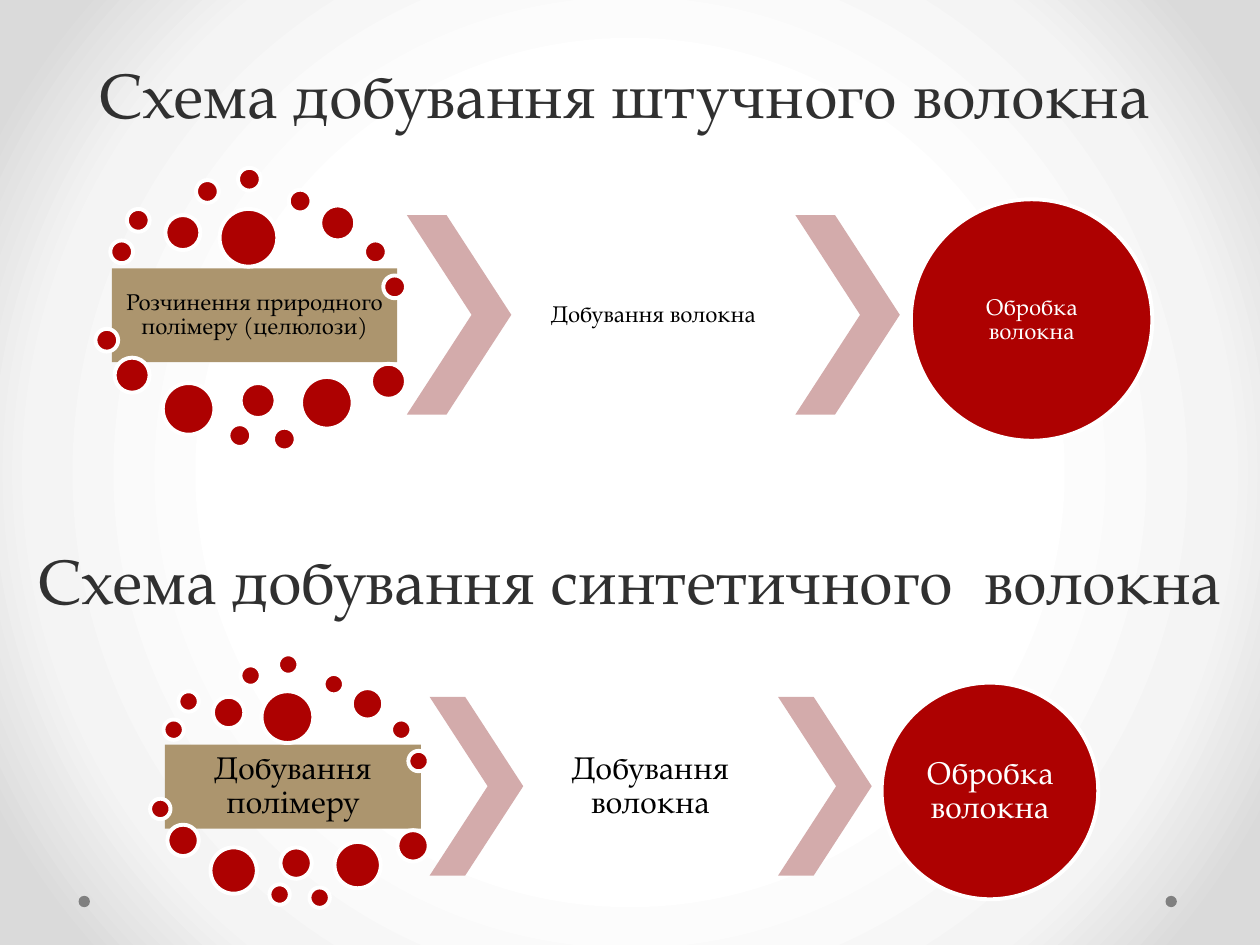
from lxml import etree
from pptx import Presentation
from pptx.dml.color import RGBColor
from pptx.enum import shapes, text
from pptx.oxml import ns
from pptx.util import Pt

HUES = {"red": "AD0101", "tan": "AC956E", "pink": "D3ABAB", "gray": "808080",
        "white": "FFFFFF", "black": "000000", "dark": "303030",
        "pale": "F4F4F4", "edge": "DADADA"}
FONT = "TeX Gyre Pagella"
KIND = shapes.MSO_SHAPE


def write(box, words, size=36, hue="dark", line=Pt(58), pad=None, anchor="BOTTOM"):
    frame = box.text_frame
    frame.auto_size = text.MSO_AUTO_SIZE.NONE
    frame.word_wrap = True
    frame.vertical_anchor = text.MSO_ANCHOR[anchor]
    if pad is not None:
        frame.margin_left = frame.margin_right = Pt(pad)
        frame.margin_top = frame.margin_bottom = Pt(pad)
    frame.text = words
    para = frame.paragraphs[0]
    para.alignment = text.PP_ALIGN.CENTER
    para.line_spacing = line
    para.space_before = Pt(0)
    para.font.name = FONT
    para.font.size = Pt(size)
    para.font.color.rgb = RGBColor.from_string(HUES[hue])


def draw(kind, left, top, wide, high, hue, edge=False):
    shape = slide.shapes.add_shape(kind, Pt(left), Pt(top), Pt(wide), Pt(high))
    shape.shadow.inherit = False
    shape.fill.solid()
    shape.fill.fore_color.rgb = RGBColor.from_string(HUES[hue])
    if edge:
        shape.line.color.rgb = RGBColor.from_string(HUES["white"])
        shape.line.width = Pt(2.25)
    else:
        shape.line.fill.background()
    return shape


deck = Presentation()
deck.slide_width, deck.slide_height = Pt(720), Pt(540)
slide = deck.slides.add_slide(deck.slide_layouts[5])

fill = slide.background.fill
fill.gradient()
grad = slide.background._cSld.find(".//" + ns.qn("a:gradFill"))
for child in list(grad):
    grad.remove(child)
stops = etree.SubElement(grad, ns.qn("a:gsLst"))
for pos, hue in [(50, "white"), (76, "pale"), (92, "edge")]:
    stop = etree.SubElement(stops, ns.qn("a:gs"), pos=str(pos * 1000))
    etree.SubElement(stop, ns.qn("a:srgbClr"), val=HUES[hue])
ring = etree.SubElement(grad, ns.qn("a:path"), path="circle")
etree.SubElement(ring, ns.qn("a:fillToRect"), l="50000", t="50000", r="50000", b="50000")

for left in (666, 44.9):
    draw(KIND.OVAL, left, 511.9, 6.5, 6.5, "gray")

title = slide.shapes.title
title.left, title.top, title.width, title.height = Pt(-3), Pt(-47.5), Pt(720), Pt(126)
write(title, "Схема добування штучного волокна")

# Offsets from the top left corner of the tan block, then diameter
DOTS = [(-1, -16, 13), (8.5, -34, 13), (30.5, -30.5, 20), (48, -50.5, 13),
        (72, -57.5, 13), (101, -45, 13), (119, -36, 20), (144, -16, 13),
        (155, 4, 13), (61.5, -34, 33), (-9.5, 34.5, 13), (1.5, 51, 20),
        (29, 65.5, 29.5), (66.5, 89, 13), (73.5, 65.5, 20), (92, 91, 13),
        (108, 62, 29.5), (148, 54.5, 20)]
FLOWS = [
    (64, 153.4, 1, 13, 1.5, "Розчинення природного полімеру (целюлози)"),
    (94.3, 425.5, 0.897, 18, 2, "Добування полімеру"),
]
for left, top, scale, size, pad, first in FLOWS:
    style = {"size": size, "line": 0.9, "anchor": "MIDDLE"}
    block = draw(KIND.RECTANGLE, left, top, 163 * scale, 53.5 * scale, "tan")
    write(block, first, hue="black", pad=pad, **style)
    for x, y, wide in DOTS:
        draw(KIND.OVAL, left + x * scale, top + y * scale,
             wide * scale, wide * scale, "red", edge=True)
    for x in (168.5, 390.5):
        arrow = draw(KIND.CHEVRON, left + x * scale, top - 30.5 * scale,
                     59.7 * scale, 114 * scale, "pink")
        arrow.adjustments[0] = 0.62
    step = slide.shapes.add_textbox(Pt(left + 227.7 * scale), Pt(top - 30.5 * scale),
                                    Pt(163 * scale), Pt(114 * scale))
    write(step, "Добування волокна", hue="black", pad=pad, **style)
    last = draw(KIND.OVAL, left + 456.5 * scale, top - 39.5 * scale,
                138 * scale, 138 * scale, "red", edge=True)
    write(last, "Обробка волокна", hue="white", pad=0, **style)

head = slide.shapes.add_textbox(Pt(0), Pt(230.4), Pt(720), Pt(126))
write(head, "Схема добування синтетичного  волокна")

deck.save("out.pptx")
